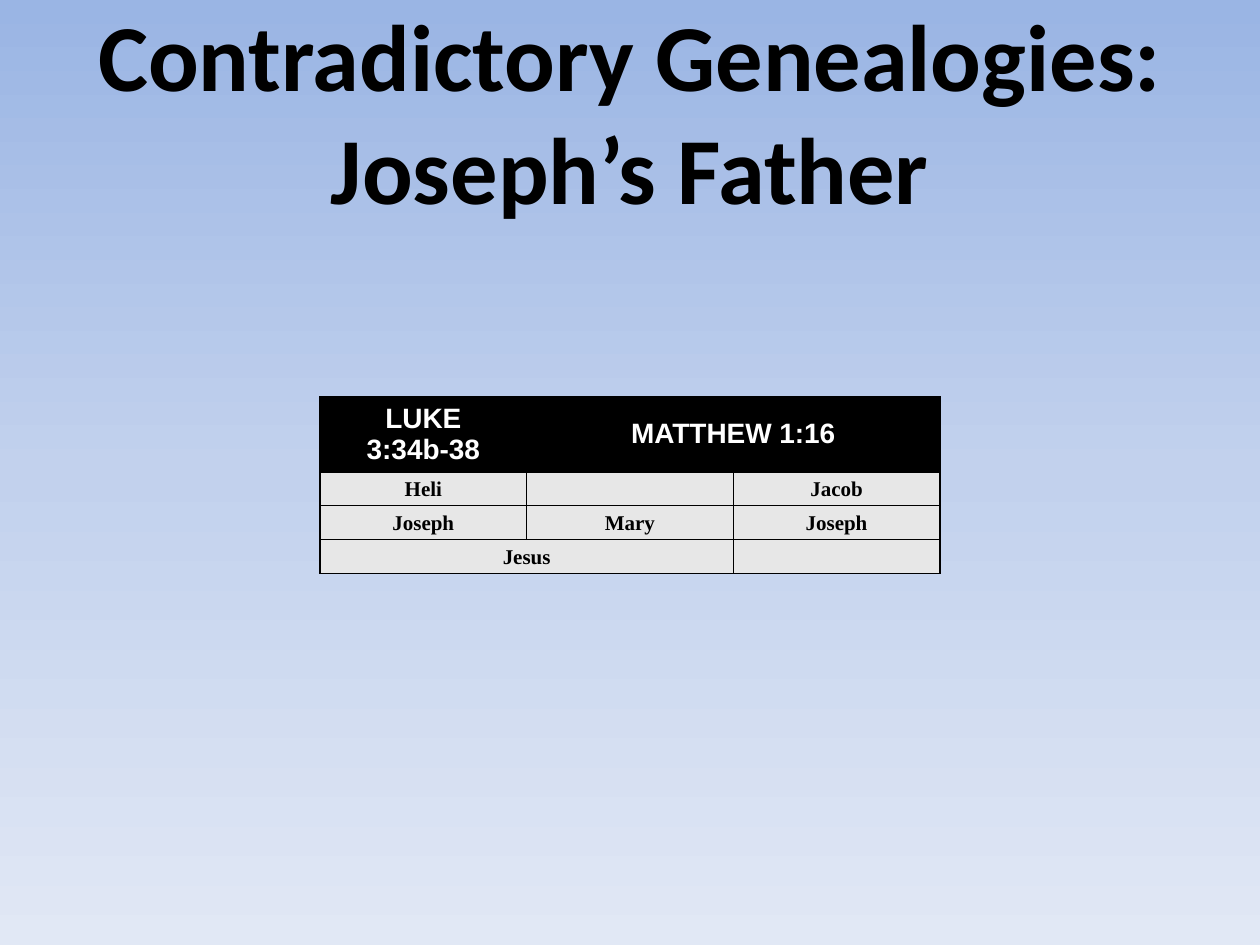
from copy import deepcopy

from lxml.etree import SubElement
from pptx import Presentation
from pptx.dml.color import RGBColor
from pptx.enum.text import MSO_ANCHOR, MSO_AUTO_SIZE, PP_ALIGN
from pptx.oxml import parse_xml
from pptx.oxml.ns import nsdecls, qn
from pptx.util import Inches, Pt

COLORS = {
    "sky_top": "9AB5E4",
    "sky_middle": "C2D1ED",
    "sky_bottom": "E1E8F5",
    "black": "000000",
    "white": "FFFFFF",
    "gray": "E7E7E7",
}


def write_text(frame, text, *, font, size, color):
    paragraph = frame.paragraphs[0]
    paragraph.alignment = PP_ALIGN.CENTER
    if not text:
        SubElement(paragraph._p, qn("a:endParaRPr"), sz=str(size * 100))
        return
    run = paragraph.add_run()
    run.text = text
    run.font.name = font
    run.font.size = Pt(size)
    run.font.bold = True
    run.font.color.rgb = RGBColor.from_string(COLORS[color])


def format_cell(cell, fill, margins):
    cell.fill.solid()
    cell.fill.fore_color.rgb = RGBColor.from_string(COLORS[fill])
    cell.vertical_anchor = MSO_ANCHOR.MIDDLE
    cell.margin_left = cell.margin_right = Inches(margins[0])
    cell.margin_top, cell.margin_bottom = Inches(margins[1]), Inches(margins[2])
    for position, side in enumerate("LRTB"):
        border = parse_xml(
            f'<a:ln{side} {nsdecls("a")} w="{Pt(1)}"><a:solidFill>'
            f'<a:srgbClr val="{COLORS["black"]}"/></a:solidFill></a:ln{side}>'
        )
        cell._tc.get_or_add_tcPr().insert(position, border)


presentation = Presentation()
presentation.slide_width = Inches(10)
presentation.slide_height = Inches(7.5)
slide = presentation.slides.add_slide(presentation.slide_layouts[5])

background = slide.background.fill
background.gradient()
background.gradient_angle = 270
first_stop = background._fill._gradFill.find(qn("a:gsLst"))[0]
first_stop.addnext(deepcopy(first_stop))
for stop, position, color in zip(
    background.gradient_stops, (0, 0.5, 1), ("sky_top", "sky_middle", "sky_bottom")
):
    stop.position = position
    stop.color.rgb = RGBColor.from_string(COLORS[color])

title = slide.shapes.title
title.left, title.top = 0, 0
title.width, title.height = presentation.slide_width, Inches(1.75)
title.text_frame.auto_size = MSO_AUTO_SIZE.NONE
title.text_frame.vertical_anchor = MSO_ANCHOR.MIDDLE
write_text(
    title.text_frame,
    "Contradictory Genealogies: Joseph’s Father",
    font="Calibri",
    size=54,
    color="black",
)

rows = [
    ["LUKE 3:34b-38", "MATTHEW 1:16", ""],
    ["Heli", "", "Jacob"],
    ["Joseph", "Mary", "Joseph"],
    ["Jesus", "", ""],
]
column_width = Inches(1.64)
row_heights = [0.38, 0.27, 0.27, 0.27]
table_width = 3 * column_width
table = slide.shapes.add_table(
    len(rows),
    3,
    (presentation.slide_width - table_width) // 2,
    Inches(3.15),
    table_width,
    Inches(sum(row_heights)),
).table
for column in table.columns:
    column.width = column_width
for row_index, (texts, height) in enumerate(zip(rows, row_heights)):
    table.rows[row_index].height = Inches(height)
    header = row_index == 0
    for column_index, text in enumerate(texts):
        cell = table.cell(row_index, column_index)
        format_cell(
            cell,
            "black" if header else "gray",
            (0.1, 0.05, 0.05) if header else (0.01, 0.01, 0),
        )
        write_text(
            cell.text_frame,
            text,
            font="Arial" if header else "Times New Roman",
            size=16 if header else 12,
            color="white" if header else "black",
        )
table.cell(0, 1).merge(table.cell(0, 2))
table.cell(3, 0).merge(table.cell(3, 1))

presentation.save("out.pptx")
